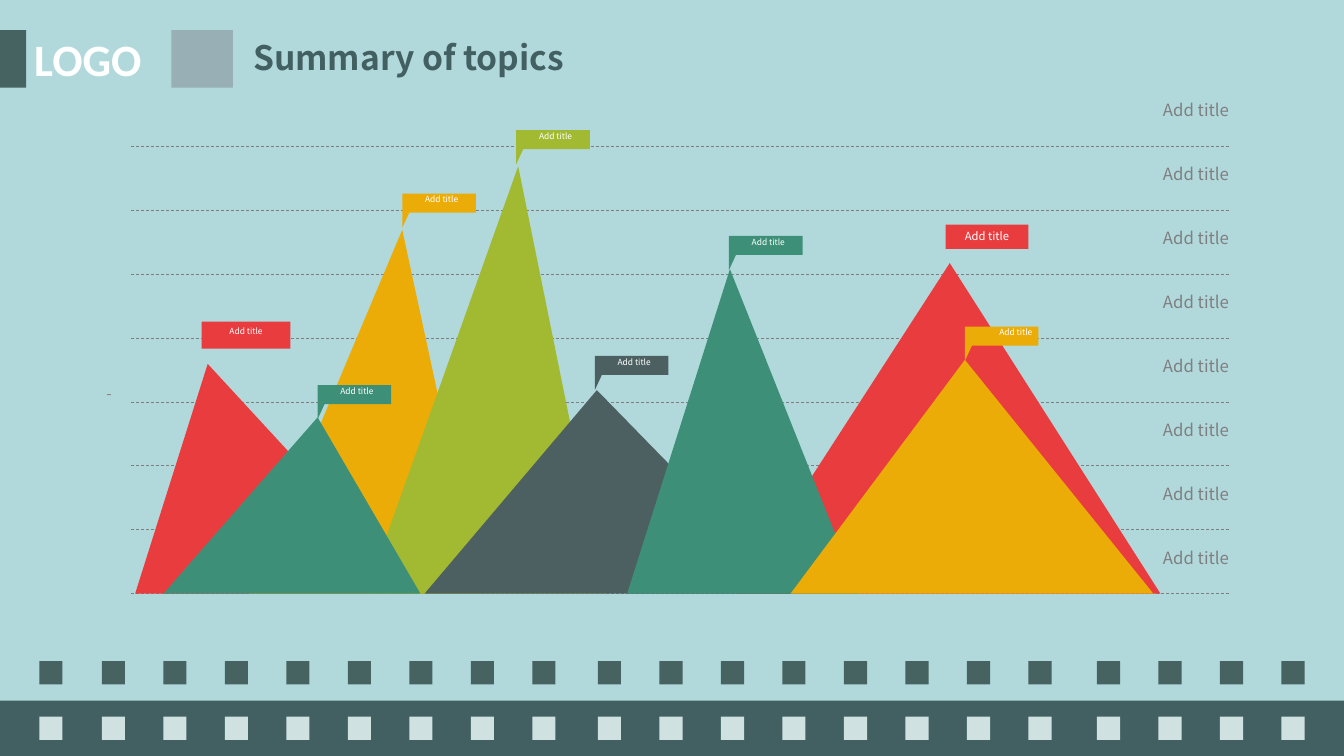
from dataclasses import dataclass

from lxml.etree import SubElement
from pptx import Presentation
from pptx.dml.color import RGBColor
from pptx.enum.dml import MSO_LINE
from pptx.enum.shapes import MSO_CONNECTOR, MSO_SHAPE
from pptx.enum.text import MSO_ANCHOR, MSO_AUTO_SIZE, PP_ALIGN
from pptx.oxml.ns import qn
from pptx.shapes.autoshape import Shape
from pptx.slide import Slide
from pptx.util import Inches, Pt

SKY = RGBColor(0xB1, 0xD9, 0xDC)
BAND = RGBColor(0x42, 0x60, 0x62)
DARK = RGBColor(0x46, 0x62, 0x61)
PALE = RGBColor(0xCF, 0xE1, 0xE1)
STEEL = RGBColor(0x98, 0xB0, 0xB5)
GREY = RGBColor(0x7F, 0x7F, 0x7F)
TAUPE = RGBColor(0x91, 0x89, 0x82)
WHITE = RGBColor(0xFF, 0xFF, 0xFF)
RED = RGBColor(0xE9, 0x3C, 0x3F)
AMBER = RGBColor(0xEB, 0xAC, 0x07)
LIME = RGBColor(0xA2, 0xB9, 0x32)
SLATE = RGBColor(0x4C, 0x60, 0x62)
TEAL = RGBColor(0x3D, 0x90, 0x77)

SANS = "Noto Sans CJK SC"
LABEL = "Add title"
BASELINE = 5.89
TOP_LINE = 1.45
LINE_COUNT = 8
LINE_GAP = (BASELINE - TOP_LINE) / (LINE_COUNT - 1)


@dataclass(frozen=True)
class Box:
    left: float
    top: float
    width: float
    height: float


@dataclass(frozen=True)
class TextStyle:
    size: float
    color: RGBColor
    align: PP_ALIGN = PP_ALIGN.CENTER
    bold: bool = False
    font: str = SANS


@dataclass(frozen=True)
class Peak:
    left: float
    apex_x: float
    apex_y: float
    right: float
    color: RGBColor


@dataclass(frozen=True)
class Flag:
    left: float
    top: float
    color: RGBColor
    label_width: float = 0.88


@dataclass(frozen=True)
class SquareRun:
    left: float
    count: int


FLAG_TEXT = TextStyle(6, WHITE)
SIGN_TEXT = TextStyle(8, WHITE)
SCALE_TEXT = TextStyle(12, GREY, PP_ALIGN.RIGHT)
TITLE_TEXT = TextStyle(24, BAND, PP_ALIGN.LEFT, True)
LOGO_TEXT = TextStyle(32, WHITE, PP_ALIGN.LEFT, True, "Calibri")

PEAKS = [
    Peak(7.3, 9.42, 2.61, 11.51, RED),
    Peak(1.34, 2.06, 3.61, 4.16, RED),
    Peak(2.47, 3.99, 2.28, 4.77, AMBER),
    Peak(3.63, 5.14, 1.65, 6, LIME),
    Peak(4.21, 5.92, 3.87, 7.89, SLATE),
    Peak(6.22, 7.24, 2.67, 8.52, TEAL),
    Peak(7.84, 9.57, 3.57, 11.44, AMBER),
    Peak(1.62, 3.15, 4.14, 4.17, TEAL),
]
FLAGS = [
    Flag(3.99, 1.92, AMBER),
    Flag(5.12, 1.29, LIME),
    Flag(9.57, 3.24, AMBER, 1.11),
    Flag(5.9, 3.53, SLATE),
    Flag(7.23, 2.34, TEAL),
    Flag(3.15, 3.82, TEAL),
]
SQUARE_RUNS = [
    SquareRun(0.39, 1),
    SquareRun(1.01, 8),
    SquareRun(5.93, 8),
    SquareRun(10.88, 4),
]


def paint(shape: Shape, color: RGBColor) -> None:
    shape.fill.solid()
    shape.fill.fore_color.rgb = color
    shape.line.fill.background()
    shape.shadow.inherit = False


def write(shape: Shape, text: str, style: TextStyle) -> None:
    frame = shape.text_frame
    frame.text = text
    frame.word_wrap = True
    frame.auto_size = MSO_AUTO_SIZE.NONE
    frame.vertical_anchor = MSO_ANCHOR.TOP
    para = frame.paragraphs[0]
    para.alignment = style.align
    para.font.name = style.font
    para.font.size = Pt(style.size)
    para.font.bold = style.bold
    para.font.color.rgb = style.color


def add_block(page: Slide, box: Box, color: RGBColor) -> Shape:
    block = page.shapes.add_shape(
        MSO_SHAPE.RECTANGLE, Inches(box.left), Inches(box.top),
        Inches(box.width), Inches(box.height))
    paint(block, color)
    return block


def add_text(page: Slide, box: Box, text: str, style: TextStyle) -> None:
    write(page.shapes.add_textbox(
        Inches(box.left), Inches(box.top),
        Inches(box.width), Inches(box.height)), text, style)


def add_outline(page: Slide, points: list[tuple[float, float]], color: RGBColor) -> None:
    corners = [(Inches(x), Inches(y)) for x, y in points]
    builder = page.shapes.build_freeform(*corners[0])
    builder.add_line_segments(corners[1:], close=True)
    paint(builder.convert_to_shape(), color)


def add_peak(page: Slide, peak: Peak) -> None:
    add_outline(page, [(peak.apex_x, peak.apex_y), (peak.left, BASELINE),
                       (peak.right, BASELINE)], peak.color)


def add_flag(page: Slide, flag: Flag) -> None:
    left, top, right, bottom = flag.left, flag.top, flag.left + 0.73, flag.top + 0.19
    add_outline(page, [(right, top), (left, top), (left, top + 0.34),
                       (left + 0.07, bottom), (right, bottom)], flag.color)
    add_text(page, Box(left - 0.05, top - 0.04, flag.label_width, 0.27), LABEL, FLAG_TEXT)


def add_scale_line(page: Slide, y: float) -> None:
    rule = page.shapes.add_connector(
        MSO_CONNECTOR.STRAIGHT, Inches(1.3), Inches(y), Inches(12.19), Inches(y))
    rule.line.color.rgb = GREY
    rule.line.width = Pt(0.5)
    rule.line.dash_style = MSO_LINE.DASH
    SubElement(rule._element.spPr, qn("a:effectLst"))
    add_text(page, Box(10.99, y - 0.51, 1.3, 0.4), LABEL, SCALE_TEXT)


def main() -> None:
    deck = Presentation()
    deck.slide_width, deck.slide_height = Inches(13.33), Inches(7.5)
    page = deck.slides.add_slide(deck.slide_layouts[5])
    page.background.fill.solid()
    page.background.fill.fore_color.rgb = SKY

    title = page.shapes.title
    title.left, title.top = Inches(2.41), Inches(0.32)
    title.width, title.height = Inches(3.52), Inches(0.51)
    write(title, "Summary of topics", TITLE_TEXT)

    add_block(page, Box(0, 6.95, 13.33, 0.55), BAND)
    for top, color in ((6.56, DARK), (7.11, PALE)):
        for run in SQUARE_RUNS:
            for index in range(run.count):
                add_block(page, Box(run.left + index * 0.61, top, 0.23, 0.23), color)

    add_block(page, Box(0, 0.3, 0.26, 0.57), DARK)
    add_text(page, Box(0.24, 0.27, 1.53, 0.64), "LOGO", LOGO_TEXT)
    add_block(page, Box(1.7, 0.3, 0.61, 0.57), STEEL)

    for index in range(LINE_COUNT):
        add_scale_line(page, TOP_LINE + index * LINE_GAP)
    add_block(page, Box(1.06, 3.91, 0.04, 0.01), TAUPE)
    for peak in PEAKS:
        add_peak(page, peak)
    for flag in FLAGS:
        add_flag(page, flag)
    write(add_block(page, Box(2, 3.19, 0.88, 0.27), RED), LABEL, FLAG_TEXT)
    write(add_block(page, Box(9.38, 2.23, 0.82, 0.24), RED), LABEL, SIGN_TEXT)

    deck.save("out.pptx")


if __name__ == "__main__":
    main()
